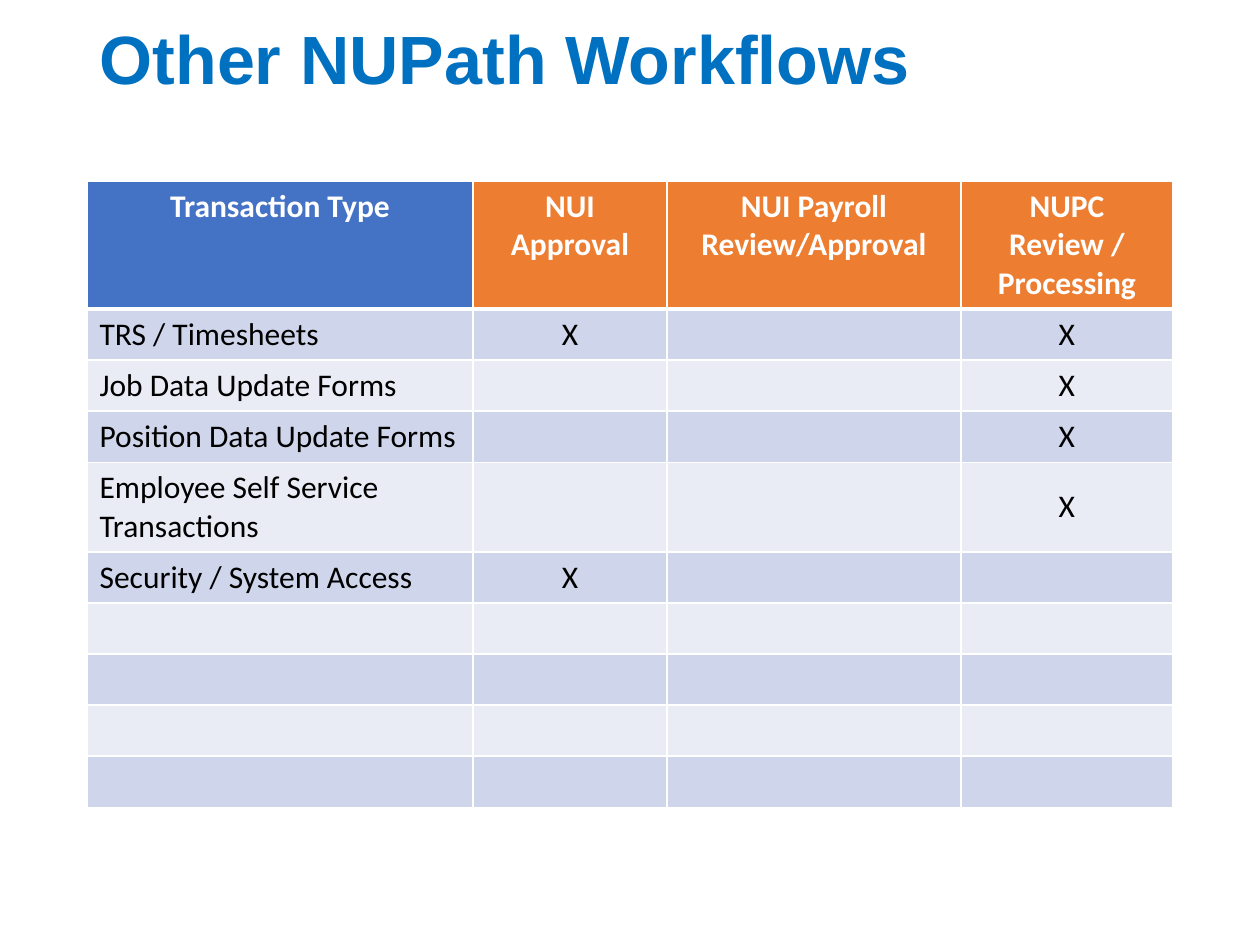
from dataclasses import dataclass

from lxml import etree
from pptx import Presentation
from pptx.dml.color import RGBColor
from pptx.enum.text import MSO_ANCHOR, PP_ALIGN
from pptx.oxml.ns import qn
from pptx.util import Pt

LEFT, CENTER = PP_ALIGN.LEFT, PP_ALIGN.CENTER
TOP, MIDDLE = MSO_ANCHOR.TOP, MSO_ANCHOR.MIDDLE
TITLE_ONLY = 5
EMU_PER_PX = 914400 / 126


@dataclass(frozen=True)
class Theme:
    title_font: str = "Arial"
    table_font: str = "Calibri"
    title_size: int = 39
    table_size: int = 18
    title: str = "0070C0"
    type_header: str = "4472C4"
    step_header: str = "ED7D31"
    bands: tuple = ("CFD5EA", "E9EBF5")
    header_text: str = "FFFFFF"
    body_text: str = "000000"
    border: str = "FFFFFF"


THEME = Theme()
COLUMN_WIDTHS = (386, 194, 294, 212)
ROW_HEIGHT = 51
ROWS = (
    ("Transaction Type", "NUI Approval", "NUI Payroll Review/Approval",
     "NUPC Review / Processing"),
    ("TRS / Timesheets", "X", "", "X"),
    ("Job Data Update Forms", "", "", "X"),
    ("Position Data Update Forms", "", "", "X"),
    ("Employee Self Service Transactions", "", "", "X"),
    ("Security / System Access", "X", "", ""),
) + (("",) * 4,) * 4


def px(length):
    return round(length * EMU_PER_PX)


def format_text(frame, font_name, size, color, bold, alignment):
    for para in frame.paragraphs:
        para.alignment = alignment
        for span in para.runs:
            span.font.name = font_name
            span.font.size = Pt(size)
            span.font.bold = bold
            span.font.color.rgb = RGBColor.from_string(color)


def add_borders(cell, bottom_width):
    """Draw the four cell borders; call before the fill, which follows them in the XML."""
    properties = cell._tc.get_or_add_tcPr()
    for side, width in (("L", 1), ("R", 1), ("T", 1), ("B", bottom_width)):
        line = etree.SubElement(properties, qn(f"a:ln{side}"), w=str(Pt(width)))
        fill = etree.SubElement(line, qn("a:solidFill"))
        etree.SubElement(fill, qn("a:srgbClr"), val=THEME.border)


def fill_title(page, text):
    title = page.shapes.title
    title.left, title.top, title.width, title.height = map(px, (87, 19, 1086, 121))
    frame = title.text_frame
    frame.text = text
    frame.word_wrap = True
    frame.vertical_anchor = TOP
    frame.paragraphs[0].line_spacing = 0.9
    format_text(frame, THEME.title_font, THEME.title_size, THEME.title, True, LEFT)


def format_cell(cell, row, column):
    is_header = row == 0
    add_borders(cell, 3 if is_header else 1)
    if is_header:
        color = THEME.step_header if column else THEME.type_header
    else:
        color = THEME.bands[(row - 1) % 2]
    cell.fill.solid()
    cell.fill.fore_color.rgb = RGBColor.from_string(color)
    cell.vertical_anchor = MIDDLE if column and not is_header else TOP
    format_text(cell.text_frame, THEME.table_font, THEME.table_size,
                THEME.header_text if is_header else THEME.body_text,
                is_header, CENTER if is_header or column else LEFT)


def add_workflow_table(page):
    table = page.shapes.add_table(
        len(ROWS), len(COLUMN_WIDTHS), px(87), px(181),
        px(sum(COLUMN_WIDTHS)), px(ROW_HEIGHT * len(ROWS))).table
    for column, width in zip(table.columns, COLUMN_WIDTHS):
        column.width = px(width)
    for row, texts in enumerate(ROWS):
        table.rows[row].height = px(ROW_HEIGHT)
        for column, text in enumerate(texts):
            cell = table.cell(row, column)
            cell.text = text
            format_cell(cell, row, column)


def main():
    deck = Presentation()
    deck.slide_width, deck.slide_height = px(1260), px(945)
    page = deck.slides.add_slide(deck.slide_layouts[TITLE_ONLY])
    fill_title(page, "Other NUPath Workflows")
    add_workflow_table(page)
    deck.save("out.pptx")


if __name__ == "__main__":
    main()
